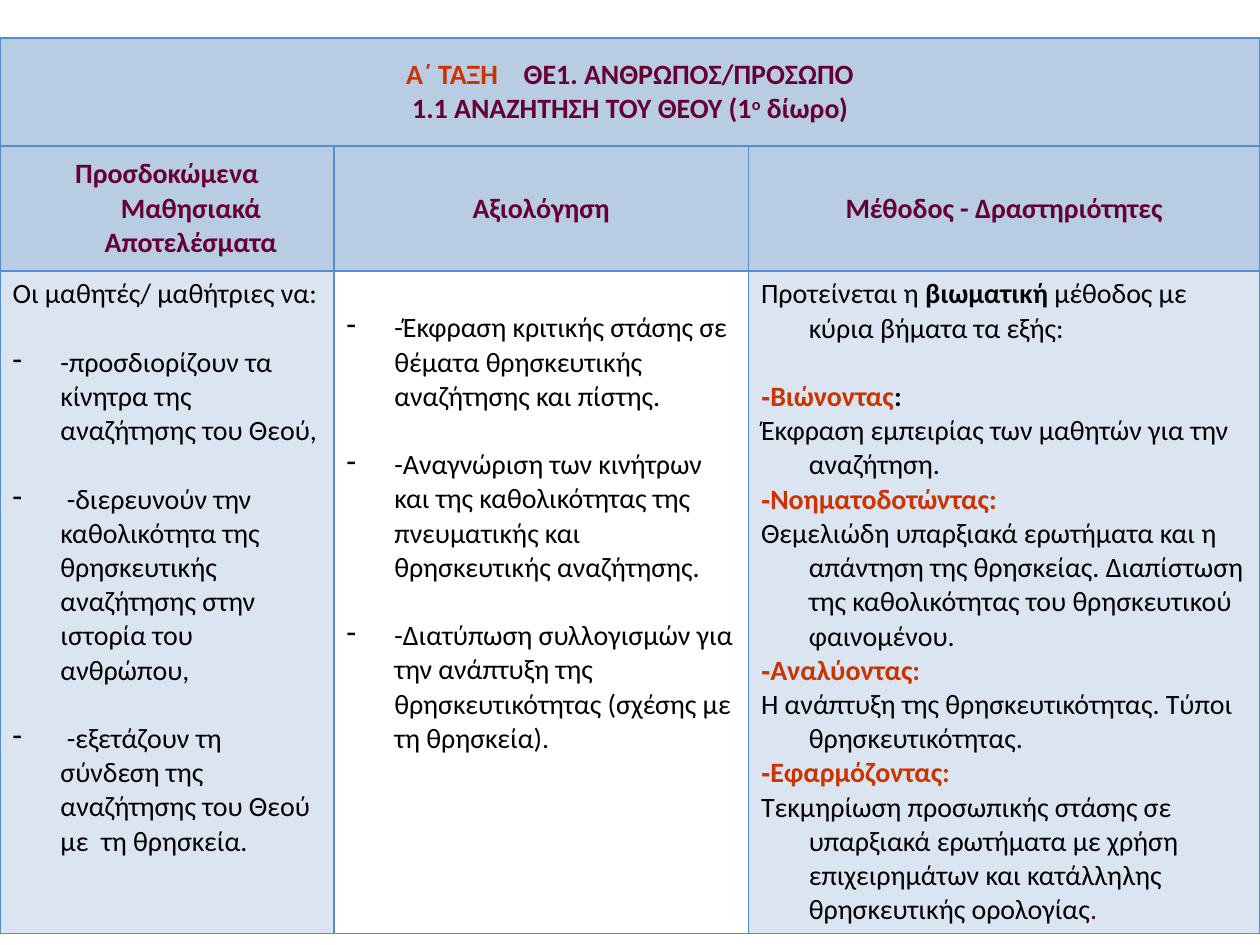
import dataclasses

import lxml.etree
import pptx
import pptx.dml.color
import pptx.enum.text
import pptx.oxml.ns
import pptx.util

Inches = pptx.util.Inches
Pt = pptx.util.Pt
qn = pptx.oxml.ns.qn
Align = pptx.enum.text.PP_ALIGN
Anchor = pptx.enum.text.MSO_ANCHOR


@dataclasses.dataclass(frozen=True)
class Theme:
    font: str = "Calibri"
    dash_font: str = "Arial"
    size: int = 16
    line_gap: float = 19.5
    indent: float = 0.38
    text: str = "000000"
    accent: str = "CC3300"
    heading: str = "660033"
    border: str = "548DD4"
    header_fill: str = "B8CCE4"
    body_fill: str = "DBE5F1"
    plain_table: str = "{2D5ABB26-0587-4C30-8999-92F81FD0307C}"


@dataclasses.dataclass
class Run:
    text: str
    color: str = Theme.text
    bold: bool = False
    font: str = Theme.font
    raised: bool = False
    spacing: int = 0


@dataclasses.dataclass
class Para:
    runs: list
    bullet: bool = False
    gap: bool = False


def heading(text, **options):
    return Run(text, Theme.heading, True, **options)


def accent(text, **options):
    return Run(text, Theme.accent, True, **options)


def step(title, *description, tail=(), gap=False):
    """A red step title followed by its description paragraph."""
    dash = accent("-", font=Theme.dash_font)
    return [Para([dash, accent(title), *tail], gap=gap), Para(list(description))]


def bullets(*texts, first_gap=True):
    return [Para([Run(text)], bullet=True, gap=first_gap or number > 0)
            for number, text in enumerate(texts)]


class SlideBuilder:
    def __init__(self, slide, theme):
        self.slide = slide
        self.theme = theme

    def table(self, left, top, widths, heights):
        frame = self.slide.shapes.add_table(
            len(heights), len(widths), Inches(left), Inches(top),
            Inches(sum(widths)), Inches(sum(heights)))
        table = frame.table
        table.first_row = table.horz_banding = False
        frame._element.find(".//" + qn("a:tableStyleId")).text = self.theme.plain_table
        for column, width in zip(table.columns, widths):
            column.width = Inches(width)
        for row, height in zip(table.rows, heights):
            row.height = Inches(height)
        for cell in table.iter_cells():
            self.borders(cell)
        return table

    def borders(self, cell):
        properties = cell._tc.get_or_add_tcPr()
        for side in ("a:lnL", "a:lnR", "a:lnT", "a:lnB"):
            line = lxml.etree.SubElement(properties, qn(side), w=str(Pt(1)))
            fill = lxml.etree.SubElement(line, qn("a:solidFill"))
            lxml.etree.SubElement(fill, qn("a:srgbClr"), val=self.theme.border)

    def cell(self, cell, paras, fill=None, header=False):
        if fill:
            cell.fill.solid()
            cell.fill.fore_color.rgb = pptx.dml.color.RGBColor.from_string(fill)
        else:
            cell.fill.background()
        cell.vertical_anchor = Anchor.MIDDLE if header else Anchor.TOP
        for number, content in enumerate(paras):
            frame = cell.text_frame
            para = frame.add_paragraph() if number else frame.paragraphs[0]
            self.paragraph(para, content, Align.CENTER if header else Align.LEFT)

    def paragraph(self, para, content, align):
        para.alignment = align
        if content.gap:
            para.space_before = Pt(self.theme.line_gap)
        properties = para._p.get_or_add_pPr()
        indent = Inches(self.theme.indent)
        properties.set("marL", str(indent))
        properties.set("indent", str(-indent))
        if content.bullet:
            lxml.etree.SubElement(properties, qn("a:buChar"), char="-")
        for run in content.runs:
            self.run(para, run)

    def run(self, para, run):
        span = para.add_run()
        span.text = run.text
        span.font.name = run.font
        span.font.size = Pt(self.theme.size)
        span.font.bold = run.bold
        span.font.color.rgb = pptx.dml.color.RGBColor.from_string(run.color)
        properties = span._r.get_or_add_rPr()
        if run.raised:
            properties.set("baseline", "30000")
        if run.spacing:
            properties.set("spc", str(run.spacing * 100))


TITLE = [
    Para([accent("Α΄ ΤΑΞΗ"), heading(" ", spacing=11),
          heading("ΘΕ1. ΑΝΘΡΩΠΟΣ/ΠΡΟΣΩΠΟ")]),
    Para([heading("1.1 ΑΝΑΖΗΤΗΣΗ ΤΟΥ ΘΕΟΥ (1"), heading("ο", raised=True),
          heading(" δίωρο)")]),
]
COLUMN_TITLES = ["Προσδοκώμενα Μαθησιακά Αποτελέσματα", "Αξιολόγηση",
                 "Μέθοδος - Δραστηριότητες"]
OUTCOMES = [
    Para([Run("Οι μαθητές/ μαθήτριες να:")]),
    *bullets(
        "-προσδιορίζουν τα κίνητρα της αναζήτησης του Θεού,",
        " -διερευνούν την καθολικότητα της θρησκευτικής αναζήτησης στην ιστορία του ανθρώπου,",
        " -εξετάζουν τη σύνδεση της αναζήτησης του Θεού με  τη θρησκεία."),
]
ASSESSMENT = bullets(
    "-Έκφραση κριτικής στάσης σε θέματα θρησκευτικής αναζήτησης και πίστης.",
    "-Αναγνώριση των κινήτρων και της καθολικότητας της πνευματικής και "
    "θρησκευτικής αναζήτησης.",
    "-Διατύπωση συλλογισμών για την ανάπτυξη της θρησκευτικότητας "
    "(σχέσης με τη θρησκεία).",
    first_gap=False)
METHOD = [
    Para([Run("Προτείνεται η "), Run("βιωματική", bold=True),
          Run(" μέθοδος με κύρια βήματα τα εξής:")]),
    *step("Βιώνοντας", Run("Έκφραση εμπειρίας των μαθητών για την αναζήτηση."),
          tail=[Run(":", bold=True)], gap=True),
    *step("Νοηματοδοτώντας:",
          Run("Θεμελιώδη υπαρξιακά ερωτήματα και η απάντηση της θρησκείας. "
              "Διαπίστωση της καθολικότητας του θρησκευτικού φαινομένου.")),
    *step("Αναλύοντας:",
          Run("Η ανάπτυξη της θρησκευτικότητας. Τύποι θρησκευτικότητας.")),
    *step("Εφαρμόζοντας:",
          Run("Τεκμηρίωση προσωπικής στάσης σε υπαρξιακά ερωτήματα με χρήση "
              "επιχειρημάτων και κατάλληλης θρησκευτικής ορολογίας"),
          Run(".", Theme.heading)),
]


def main():
    deck = pptx.Presentation()
    deck.slide_width, deck.slide_height = Inches(10), Inches(7.5)
    theme = Theme()
    blank_layout = deck.slide_layouts[6]
    builder = SlideBuilder(deck.slides.add_slide(blank_layout), theme)

    table = builder.table(0, 0.3, [2.65, 3.29, 4.06], [0.86, 0.99, 5.17])
    table.cell(0, 0).merge(table.cell(0, 2))
    builder.cell(table.cell(0, 0), TITLE, theme.header_fill, header=True)
    for column, title in enumerate(COLUMN_TITLES):
        builder.cell(table.cell(1, column), [Para([heading(title)])],
                     theme.header_fill, header=True)

    body_fills = [theme.body_fill, None, theme.body_fill]
    for column, paras in enumerate([OUTCOMES, ASSESSMENT, METHOD]):
        builder.cell(table.cell(2, column), paras, body_fills[column])
    table.cell(2, 1).margin_top = Inches(0.32)

    deck.save("out.pptx")


if __name__ == "__main__":
    main()
